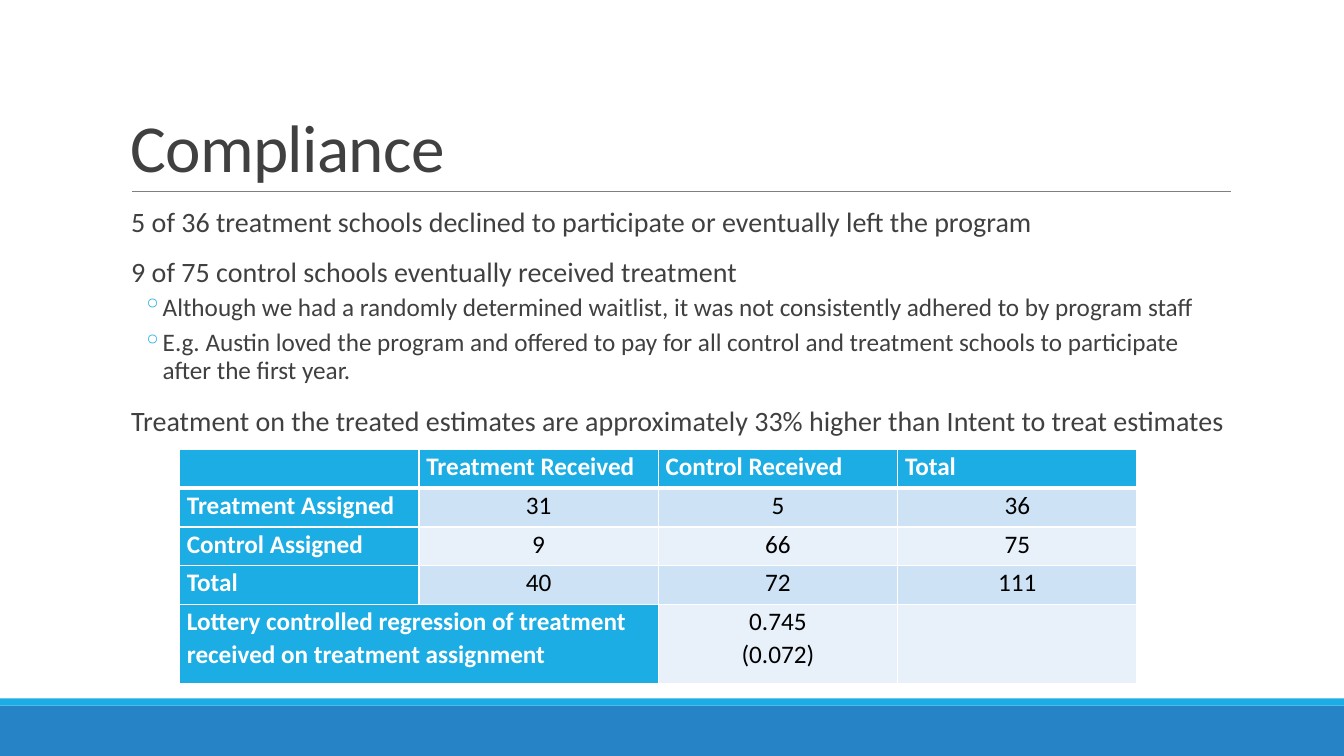
import pptx
import pptx.util
import pptx.dml.color
import pptx.enum.shapes
import pptx.enum.text
import pptx.oxml
import pptx.oxml.ns
import lxml.etree

SCALE = 9525
FONT = "Calibri"
COLORS = {
    "text": "404040", "rule": "808080", "white": "FFFFFF", "black": "000000",
    "cyan": "1CADE4", "blue": "2683C6", "dark": "CDE3F5", "light": "E8F1FA",
}
POINTS = [
    (0, "5 of 36 treatment schools declined to participate or eventually left the program"),
    (0, "9 of 75 control schools eventually received treatment"),
    (1, "Although we had a randomly determined waitlist, it was not consistently adhered to by program staff"),
    (1, "E.g. Austin loved the program and offered to pay for all control and treatment schools to participate after the first year."),
    (0, "Treatment on the treated estimates are approximately 33% higher than Intent to treat estimates"),
]
ROWS = [
    ["", "Treatment Received", "Control Received", "Total"],
    ["Treatment Assigned", "31", "5", "36"],
    ["Control Assigned", "9", "66", "75"],
    ["Total", "40", "72", "111"],
    ["Lottery controlled regression of treatment received on treatment assignment", "", "0.745\n(0.072)", ""],
]


def px(num):
    return pptx.util.Emu(num * SCALE)


def tint(name):
    return pptx.dml.color.RGBColor.from_string(COLORS[name])


def add(node, tag, **attrs):
    item = lxml.etree.SubElement(node, pptx.oxml.ns.qn(tag))
    for key, val in attrs.items():
        item.set(key, str(val))
    return item


def write(para, text, size=18, color="text", bold=False, align="LEFT",
          lead=0.9, before=0, after=0, track=0):
    para.alignment = getattr(pptx.enum.text.PP_ALIGN, align)
    para.line_spacing = lead
    para.space_before = pptx.util.Pt(before)
    para.space_after = pptx.util.Pt(after)
    run = para.add_run()
    run.text = text
    run.font.name = FONT
    run.font.size = pptx.util.Pt(size)
    run.font.bold = bold
    run.font.color.rgb = tint(color)
    if track:
        run.font._element.set("spc", str(track))


def indent(para, left, hang=0, mark=None):
    props = para._p.get_or_add_pPr()
    props.set("marL", str(px(left)))
    props.set("indent", str(px(-hang)))
    if mark:
        add(add(props, "a:buClr"), "a:srgbClr", val=COLORS["cyan"])
        add(props, "a:buChar", char=mark)


def frame(slide, x, y, w, h):
    body = slide.shapes.add_textbox(px(x), px(y), px(w), px(h)).text_frame
    body.word_wrap = True
    return body


def footer(slide, x, y, w, h):
    edge = 7
    for top, high, color in ((y + edge, h - edge, "blue"), (y, edge, "cyan")):
        bar = slide.shapes.add_shape(
            pptx.enum.shapes.MSO_SHAPE.RECTANGLE, px(x), px(top), px(w), px(high))
        bar.shadow.inherit = False
        bar.fill.solid()
        bar.fill.fore_color.rgb = tint(color)
        bar.line.fill.background()


def title(slide, x, y, w, h):
    body = frame(slide, x, y, w, h)
    body.vertical_anchor = pptx.enum.text.MSO_ANCHOR.BOTTOM
    write(body.paragraphs[0], "Compliance", size=48, lead=0.85, track=-50)
    rule = slide.shapes.add_connector(
        pptx.enum.shapes.MSO_CONNECTOR.STRAIGHT,
        px(x + 11), px(y + h), px(x + w + 1), px(y + h))
    rule.line.color.rgb = tint("rule")
    rule.line.width = pptx.util.Pt(0.5)
    add(rule._element.spPr, "a:effectLst")


def points(slide, x, y, w, h):
    body = frame(slide, x, y, w, h)
    body.margin_left = body.margin_right = 0
    for num, (level, text) in enumerate(POINTS):
        para = body.add_paragraph() if num else body.paragraphs[0]
        if level:
            write(para, text, before=2, after=4)
            indent(para, 40, 19, "◦")
        else:
            write(para, text, size=20, before=12, after=2)
            indent(para, 10)


def border(cell, row):
    props = cell._tc.get_or_add_tcPr()
    for spot, side in enumerate("LRTB"):
        thick = (row, side) in ((0, "B"), (1, "T"))
        line = add(props, "a:ln" + side, w=pptx.util.Pt(3 if thick else 1))
        add(add(line, "a:solidFill"), "a:srgbClr", val=COLORS["white"])
        props.insert(spot, line)


def table(slide, x, y, w, h):
    high = 37
    last = len(ROWS) - 1
    grid = slide.shapes.add_table(
        len(ROWS), len(ROWS[0]), px(x), px(y), px(w), px(h)).table
    for col in grid.columns:
        col.width = px(w // len(ROWS[0]))
    for num, row in enumerate(grid.rows):
        row.height = px(h - high * last if num == last else high)
    grid.cell(last, 0).merge(grid.cell(last, 1))
    for r, row in enumerate(ROWS):
        for c, text in enumerate(row):
            cell = grid.cell(r, c)
            head = r == 0 or c == 0
            cell.margin_left = cell.margin_right = px(7)
            cell.margin_top = cell.margin_bottom = 0
            cell.fill.solid()
            cell.fill.fore_color.rgb = tint(
                "cyan" if head else "dark" if r % 2 else "light")
            border(cell, r)
            if not text:
                continue
            for num, part in enumerate(text.split("\n")):
                body = cell.text_frame
                para = body.add_paragraph() if num else body.paragraphs[0]
                write(para, part, color="white" if head else "black", bold=head,
                      align="LEFT" if head else "CENTER", lead=1.07)


def main():
    deck = pptx.Presentation()
    deck.slide_width, deck.slide_height = px(1280), px(720)
    slide = deck.slides.add_slide(deck.slide_layouts[6])
    footer(slide, 0, 665, 1280, 55)
    title(slide, 115, 30, 1056, 152)
    points(slide, 115, 194, 1056, 422)
    table(slide, 171, 428, 912, 223)
    deck.save("out.pptx")


if __name__ == "__main__":
    main()
